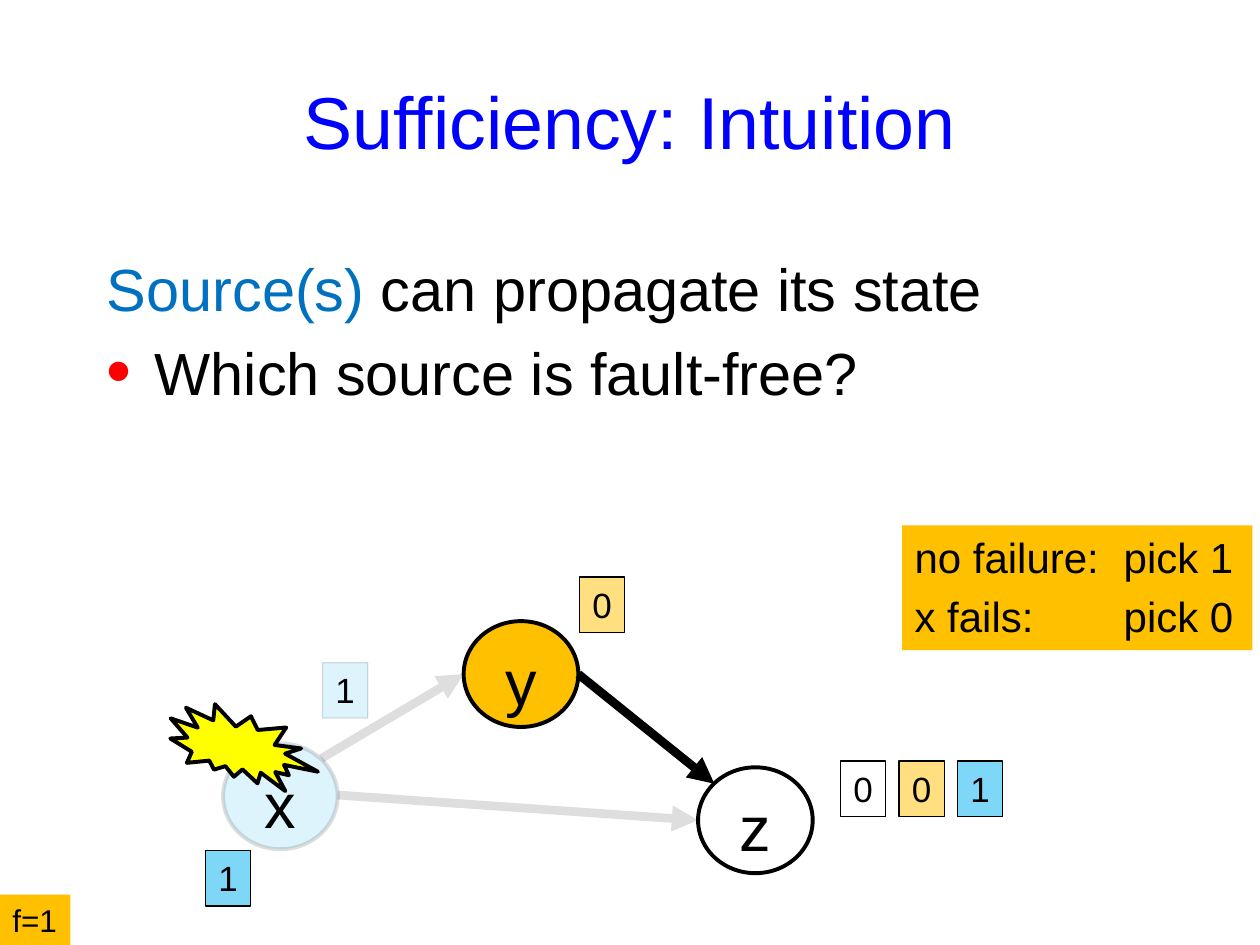
from lxml.etree import SubElement
from pptx import Presentation
from pptx.dml.color import RGBColor
from pptx.enum.shapes import MSO_CONNECTOR, MSO_SHAPE
from pptx.enum.text import MSO_ANCHOR, MSO_AUTO_SIZE, PP_ALIGN
from pptx.oxml.ns import qn
from pptx.util import Inches, Pt

COLORS = {"title": "0000FF", "source": "0070C0", "ink": "000000", "bullet": "FF0000",
          "amber": "FFC000", "sky": "00B0F0", "burst": "FFFF00"}
FADED, HALF = 13, 50  # opacity in percent
NODE_W, NODE_H = 9.1, 8.4
BADGE_W, BADGE_H = 3.6, 4.4


def grid(*cells):
    """Turn columns and rows of a 100 x 75 grid into lengths."""
    return [Inches(cell / 10) for cell in cells]


def paint(color_format, name, opacity=100):
    color_format.fore_color.rgb = RGBColor.from_string(COLORS[name])
    if opacity < 100:
        color = color_format._xPr.find(qn("a:solidFill"))[0]
        SubElement(color, qn("a:alpha"), val=str(opacity * 1000))


def add_words(paragraph, words, size, color="ink"):
    run = paragraph.add_run()
    run.text = words
    run.font.name = "Arial"
    run.font.size = Pt(size)
    run.font.color.rgb = RGBColor.from_string(COLORS[color])


def space_before(paragraph, percent=20):
    spacing = SubElement(paragraph._p.get_or_add_pPr(), qn("a:spcBef"))
    SubElement(spacing, qn("a:spcPct"), val=str(percent * 1000))


def add_bullet(paragraph):
    props = paragraph._p.get_or_add_pPr()
    color = SubElement(props, qn("a:buClr"))
    SubElement(color, qn("a:srgbClr"), val=COLORS["bullet"])
    SubElement(props, qn("a:buSzPct"), val="120000")
    SubElement(props, qn("a:buFont"), typeface="Arial")
    SubElement(props, qn("a:buChar"), char="•")


def add_figure(slide, kind, box, fill=None, opacity=100, line=None, line_opacity=100):
    figure = slide.shapes.add_shape(kind, *grid(*box))
    figure.shadow.inherit = False
    if fill:
        figure.fill.solid()
        paint(figure.fill, fill, opacity)
    else:
        figure.fill.background()
    if line:
        figure.line.width = Pt(line)
        figure.line.fill.solid()
        paint(figure.line.fill, "ink", line_opacity)
    else:
        figure.line.fill.background()
    figure.text_frame.vertical_anchor = MSO_ANCHOR.TOP
    return figure


def add_node(slide, letter, left, top, **style):
    node = add_figure(slide, MSO_SHAPE.OVAL, (left, top, NODE_W, NODE_H), line=2.25, **style)
    label = node.text_frame.paragraphs[0]
    label.alignment = PP_ALIGN.CENTER
    space_before(label)
    add_words(label, letter, 36)


def add_badge(slide, value, left, top, **style):
    badge = add_figure(slide, MSO_SHAPE.RECTANGLE, (left, top, BADGE_W, BADGE_H),
                       line=0.75, **style)
    frame = badge.text_frame
    frame.word_wrap = False
    frame.auto_size = MSO_AUTO_SIZE.SHAPE_TO_FIT_TEXT
    label = frame.paragraphs[0]
    label.alignment = PP_ALIGN.CENTER
    space_before(label)
    add_words(label, value, 20)


def add_arrow(slide, start, end, opacity=100):
    arrow = slide.shapes.add_connector(MSO_CONNECTOR.STRAIGHT, *grid(*start, *end))
    arrow.line.width = Pt(5)
    arrow.line.fill.solid()
    paint(arrow.line.fill, "ink", opacity)
    SubElement(arrow.line._ln, qn("a:tailEnd"), type="triangle")
    SubElement(arrow._element.spPr, qn("a:effectLst"))


def add_heading(slide):
    frame = slide.shapes.add_textbox(*grid(7.5, 3.3, 85, 12.5)).text_frame
    frame.word_wrap = True
    frame.vertical_anchor = MSO_ANCHOR.MIDDLE
    title = frame.paragraphs[0]
    title.alignment = PP_ALIGN.CENTER
    add_words(title, "Sufficiency: Intuition", 42, "title")


def add_body(slide):
    frame = slide.shapes.add_textbox(*grid(7.5, 16.7, 92.5, 50)).text_frame
    frame.word_wrap = True
    statement, question = frame.paragraphs[0], frame.add_paragraph()
    statement.line_spacing = 1.5
    for paragraph in (statement, question):
        props = paragraph._p.get_or_add_pPr()
        props.set("marL", str(Inches(0.38)))
        props.set("indent", str(-Inches(0.38)))
        space_before(paragraph)
    add_bullet(question)
    add_words(statement, "Source(s)", 34, "source")
    add_words(statement, " can propagate its state", 34)
    add_words(question, "Which source is fault-free?", 34)


def add_choices(slide):
    frame = add_figure(slide, MSO_SHAPE.RECTANGLE, (71.6, 41.7, 27.8, 9.9), "amber").text_frame
    frame.word_wrap = True
    rows = [("no failure:", "pick 1"), ("x fails:", "pick 0")]
    for number, (case, pick) in enumerate(rows):
        row = frame.add_paragraph() if number else frame.paragraphs[0]
        row.alignment = PP_ALIGN.LEFT
        space_before(row)
        stops = SubElement(row._p.get_or_add_pPr(), qn("a:tabLst"))
        SubElement(stops, qn("a:tab"), pos=str(Inches(1.66)), algn="l")
        add_words(row, f"{case}\t{pick}", 24)


def add_fault_bound(slide):
    frame = add_figure(slide, MSO_SHAPE.RECTANGLE, (0, 71, 5.6, 4), "amber").text_frame
    frame.word_wrap = False
    bound = frame.paragraphs[0]
    bound.alignment = PP_ALIGN.LEFT
    add_words(bound, "f=1", 18)


def main():
    deck = Presentation()
    deck.slide_width, deck.slide_height = grid(100, 75)
    slide = deck.slides.add_slide(deck.slide_layouts[6])
    add_heading(slide)
    add_body(slide)

    # Nodes, with the failing source x faded
    add_node(slide, "y", 36.8, 49.3, fill="amber")
    add_node(slide, "z", 55.4, 60.9)
    add_node(slide, "x", 17.7, 59, fill="sky", opacity=FADED, line_opacity=FADED)

    # Links
    add_arrow(slide, (25.5, 60.2), (36.8, 53.5), FADED)
    add_arrow(slide, (26.8, 63.1), (55.4, 65.1), FADED)
    add_arrow(slide, (45.9, 53.5), (56.7, 62.2))
    add_choices(slide)

    # States of x and y, and the message on its way from x to y
    add_badge(slide, "1", 16.3, 67.5, fill="sky", opacity=HALF)
    add_badge(slide, "0", 46, 45.8, fill="amber", opacity=HALF)
    add_badge(slide, "1", 25.6, 52.6, fill="sky", opacity=FADED, line_opacity=FADED)

    # States known to z
    for place, (value, fill) in enumerate([("0", None), ("0", "amber"), ("1", "sky")]):
        add_badge(slide, value, 66.7 + 4.65 * place, 60.4, fill=fill, opacity=HALF)

    # Failure of x
    burst = add_figure(slide, MSO_SHAPE.EXPLOSION2, (13.1, 56.3, 12.3, 6.2), "burst", line=2.25)
    burst.rotation = 28.2
    add_fault_bound(slide)
    deck.save("out.pptx")


if __name__ == "__main__":
    main()
